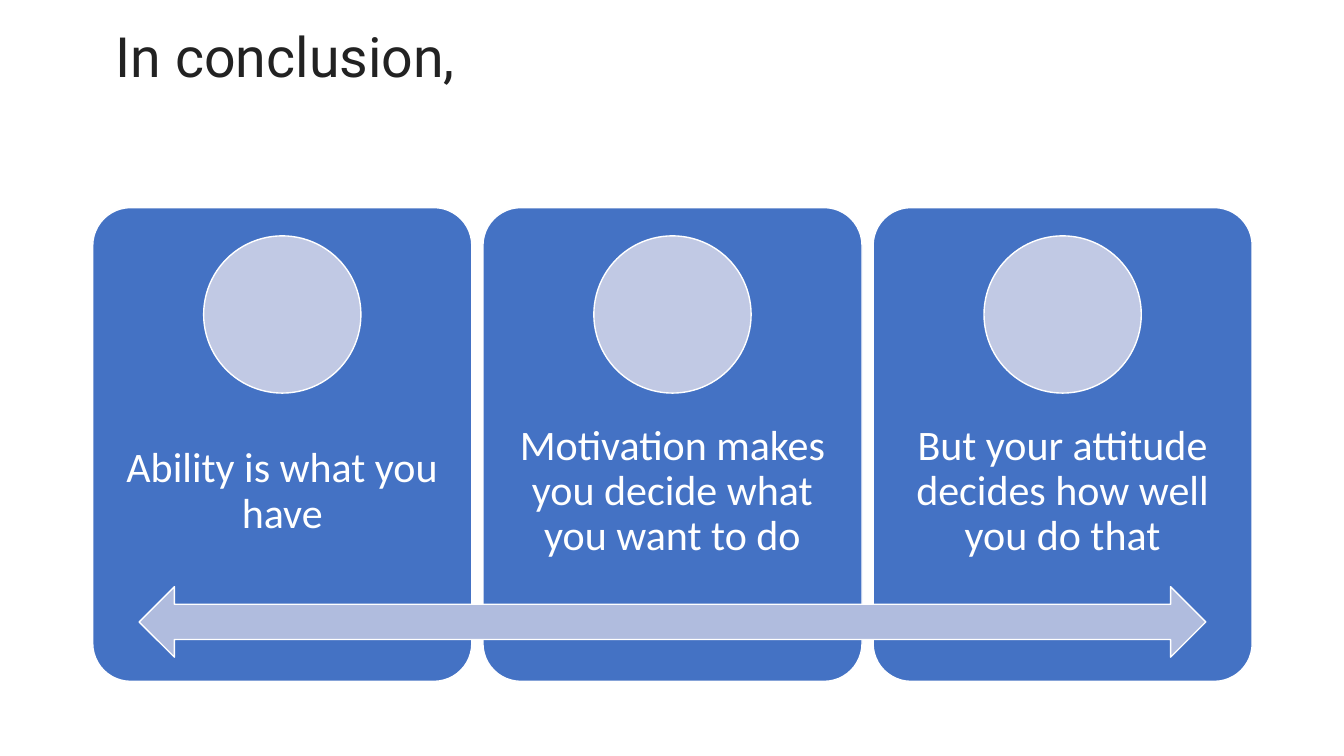
from pptx import Presentation
from pptx.dml.color import RGBColor
from pptx.enum.shapes import MSO_SHAPE
from pptx.enum.text import MSO_ANCHOR, PP_ALIGN
from pptx.util import Emu, Pt

PX = 9144
THEME = {
    "card": "4472C4", "disc": "C1C9E4", "arrow": "B0BCDE",
    "light": "FFFFFF", "dark": "222222",
    "head": 39.6, "body": 30, "line": 1,
    "headfont": "Roboto", "bodyfont": "Calibri",
}


def draw(kind, box, fill):
    shape = slide.shapes.add_shape(kind, *[Emu(n * PX) for n in box])
    shape.shadow.inherit = False
    shape.fill.solid()
    shape.fill.fore_color.rgb = RGBColor.from_string(THEME[fill])
    shape.line.color.rgb = RGBColor.from_string(THEME["light"])
    shape.line.width = Pt(THEME["line"])
    return shape


def write(box, words, role, color, align, anchor, pads):
    frame = slide.shapes.add_textbox(*[Emu(n * PX) for n in box]).text_frame
    frame.word_wrap = True
    frame.vertical_anchor = anchor
    left, top, right, base = [Emu(n * PX) for n in pads]
    frame.margin_left, frame.margin_top = left, top
    frame.margin_right, frame.margin_bottom = right, base
    para = frame.paragraphs[0]
    para.alignment = align
    para.line_spacing = 0.9
    run = para.add_run()
    run.text = words
    run.font.name = THEME[role + "font"]
    run.font.size = Pt(THEME[role])
    run.font.color.rgb = RGBColor.from_string(THEME[color])


deck = Presentation()
deck.slide_width, deck.slide_height = Emu(1333 * PX), Emu(750 * PX)
slide = deck.slides.add_slide(deck.slide_layouts[6])

write((92, 29, 1150, 105), "In conclusion,", "head", "dark",
      PP_ALIGN.LEFT, MSO_ANCHOR.TOP, (23, 0, 10, 5))

LEFT, STEP, WIDE, DISC = 92, 387, 376, 156
points = [
    "Ability is what you have",
    "Motivation makes you decide what you want to do",
    "But your attitude decides how well you do that",
]
for i, point in enumerate(points):
    x = LEFT + i * STEP
    card = draw(MSO_SHAPE.ROUNDED_RECTANGLE, (x, 206, WIDE, 470), "card")
    card.adjustments[0] = 0.1
    write((x, 394, WIDE, 188), point, "body", "light",
          PP_ALIGN.CENTER, MSO_ANCHOR.MIDDLE, (23, 23, 23, 23))
    draw(MSO_SHAPE.OVAL, (x + (WIDE - DISC) // 2, 234, DISC, DISC), "disc")

draw(MSO_SHAPE.LEFT_RIGHT_ARROW, (138, 582, 1058, 70), "arrow")

deck.save("out.pptx")
